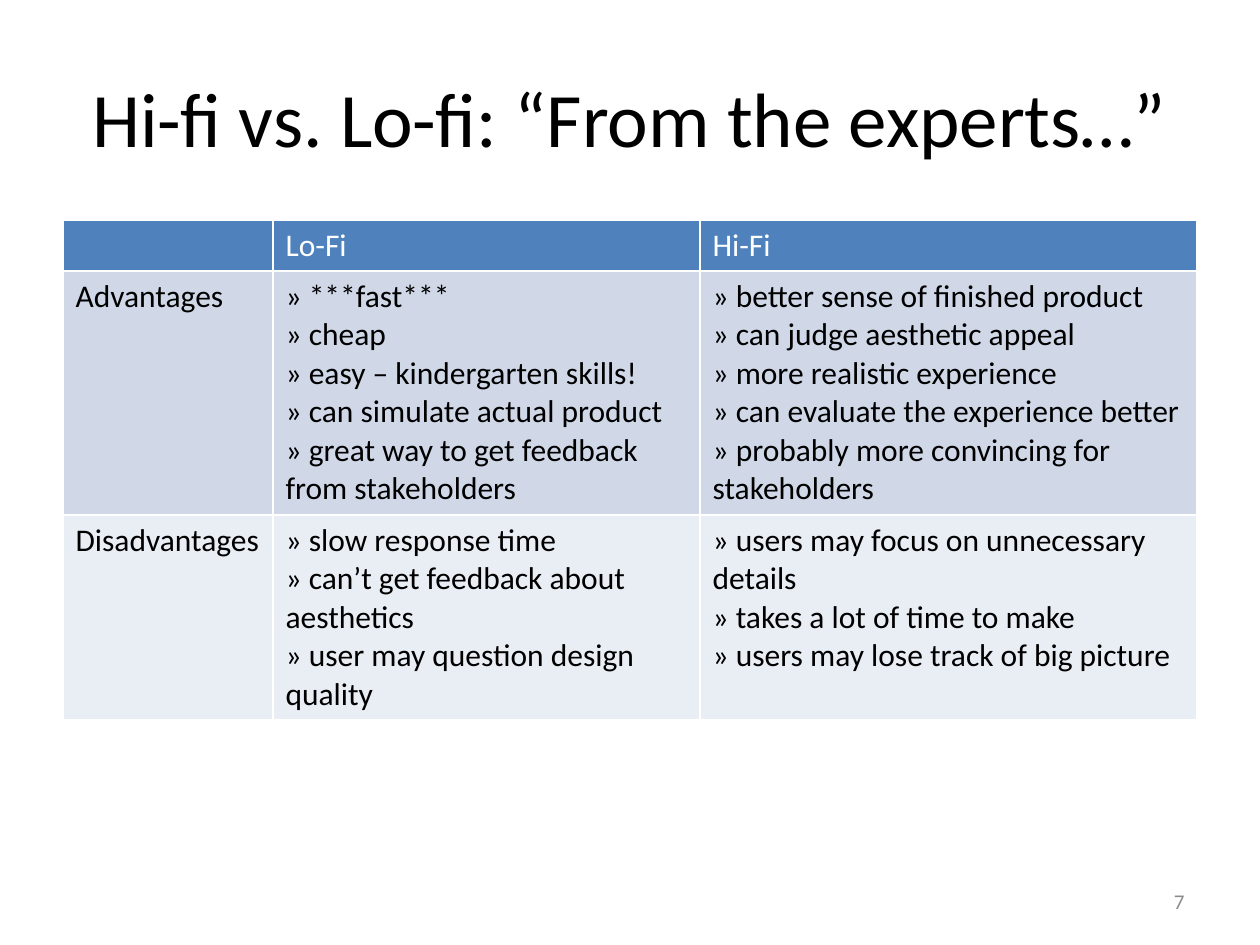
"""Builds a slide with a table that compares lo-fi and hi-fi prototypes."""
from pptx import Presentation
from pptx.dml.color import RGBColor as Rgb
from pptx.enum.text import MSO_ANCHOR as Anchor, PP_ALIGN as Align
from pptx.util import Pt

SCALE = 914400 // 126
HUES = {"ink": "000000", "white": "FFFFFF", "head": "4F81BD",
        "dark": "D0D8E8", "light": "E9EDF4", "grey": "8C8C8C"}
TITLE = "Hi-fi vs. Lo-fi: “From the experts…”"
NUMBER = "7"
ROWS = [
    ("head", "white", 51, [[], ["Lo-Fi"], ["Hi-Fi"]]),
    ("dark", "ink", 244, [
        ["Advantages"],
        ["» ***fast***",
         "» cheap",
         "» easy – kindergarten skills!",
         "» can simulate actual product",
         "» great way to get feedback from stakeholders"],
        ["» better sense of finished product",
         "» can judge aesthetic appeal",
         "» more realistic experience",
         "» can evaluate the experience better",
         "» probably more convincing for stakeholders"]]),
    ("light", "ink", 204, [
        ["Disadvantages"],
        ["» slow response time",
         "» can’t get feedback about aesthetics",
         "» user may question design quality"],
        ["» users may focus on unnecessary details",
         "» takes a lot of time to make",
         "» users may lose track of big picture"]]),
]
WIDTHS = [210, 427, 497]


def px(*nums):
    return [num * SCALE for num in nums]


def write(frame, lines, size=18, hue="ink", align=Align.LEFT, anchor=Anchor.TOP):
    frame.word_wrap = True
    frame.vertical_anchor = anchor
    for num, line in enumerate(lines):
        para = frame.paragraphs[0] if num == 0 else frame.add_paragraph()
        para.alignment = align
        run = para.add_run()
        run.text = line
        font = run.font
        font.name, font.size, font.bold = "Calibri", Pt(size), False
        font.color.rgb = Rgb.from_string(HUES[hue])


def main():
    deck = Presentation()
    deck.slide_width, deck.slide_height = px(1260, 945)
    slide = deck.slides.add_slide(deck.slide_layouts[5])
    shapes = slide.shapes

    title = shapes.title
    title.left, title.top, title.width, title.height = px(63, 38, 1134, 157)
    write(title.text_frame, [TITLE], size=44, align=Align.CENTER, anchor=Anchor.MIDDLE)

    high = sum(row[2] for row in ROWS)
    box = px(63, 220, sum(WIDTHS), high)
    table = shapes.add_table(len(ROWS), len(WIDTHS), *box).table
    for col, width in zip(table.columns, px(*WIDTHS)):
        col.width = width
    for row, (fill, hue, tall, texts) in zip(table.rows, ROWS):
        row.height = tall * SCALE
        for cell, lines in zip(row.cells, texts):
            cell.fill.solid()
            cell.fill.fore_color.rgb = Rgb.from_string(HUES[fill])
            write(cell.text_frame, lines, hue=hue)

    foot = shapes.add_textbox(*px(903, 876, 294, 50))
    write(foot.text_frame, [NUMBER], size=12, hue="grey",
          align=Align.RIGHT, anchor=Anchor.MIDDLE)
    deck.save("out.pptx")


if __name__ == "__main__":
    main()
